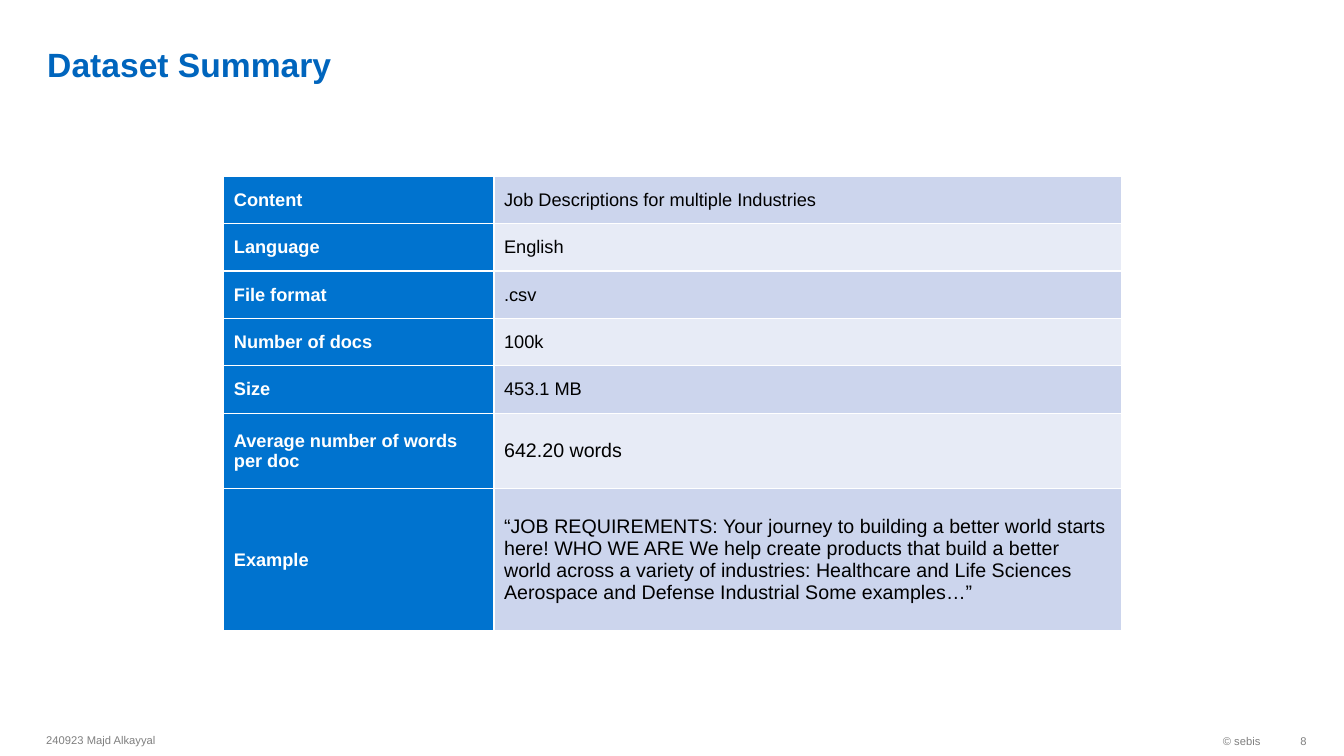
import dataclasses
import typing

import pptx
import pptx.dml.color
import pptx.enum.text
import pptx.oxml
import pptx.oxml.ns
import pptx.util

Inches = pptx.util.Inches
Anchor = pptx.enum.text.MSO_ANCHOR
Align = pptx.enum.text.PP_ALIGN


@dataclasses.dataclass(frozen=True)
class Theme:
    font: str = "Arial"
    title: str = "0065BD"
    header: str = "0073CF"
    bands: tuple[str, str] = ("CCD5ED", "E7EBF6")
    white: str = "FFFFFF"
    black: str = "000000"
    grey: str = "7F7F7F"
    title_size: int = 24
    label_size: int = 13
    long_size: int = 14
    footer_size: int = 8
    border: int = 1


THEME = Theme()


@dataclasses.dataclass(frozen=True)
class Label:
    text: str
    box: tuple[float, float, float, float]
    size: int = THEME.footer_size
    color: str = THEME.grey
    bold: bool = False
    align: typing.Any = Align.LEFT
    anchor: typing.Any = Anchor.MIDDLE
    margin_right: float = 0.1
    margin_y: float = 0.05


@dataclasses.dataclass(frozen=True)
class Fact:
    name: str
    value: str
    height: float = 0.47
    size: int = THEME.label_size


LABELS = [
    Label("Dataset Summary", (0.37, 0.05, 11.58, 0.79), THEME.title_size,
          THEME.title, True, anchor=Anchor.BOTTOM, margin_y=0),
    Label("240923 Majd Alkayyal", (0.36, 7.18, 6.3, 0.32)),
    Label("© sebis", (10.26, 7.19, 2.34, 0.32), align=Align.RIGHT),
    Label("8", (12.6, 7.19, 0.36, 0.32), align=Align.RIGHT, margin_right=0),
]

FACTS = [
    Fact("Content", "Job Descriptions for multiple Industries"),
    Fact("Language", "English"),
    Fact("File format", ".csv"),
    Fact("Number of docs", "100k"),
    Fact("Size", "453.1 MB"),
    Fact("Average number of words per doc", "642.20 words", 0.75, THEME.long_size),
    Fact(
        "Example",
        "“JOB REQUIREMENTS: Your journey to building a better world starts here! "
        "WHO WE ARE We help create products that build a better world across a "
        "variety of industries: Healthcare and Life Sciences Aerospace and Defense "
        "Industrial Some examples…”",
        1.41,
        THEME.long_size,
    ),
]

TABLE_LEFT, TABLE_TOP = 2.22, 1.75
COLUMN_WIDTHS = (2.68, 6.22)


def apply(target: typing.Any, values: dict[str, typing.Any]) -> None:
    for name, value in values.items():
        setattr(target, name, value)


def write(p: typing.Any, text: str, size: int, color: str, bold: bool) -> None:
    r = p.add_run()
    r.text = text
    apply(r.font, {"name": THEME.font, "size": pptx.util.Pt(size), "bold": bold})
    r.font.color.rgb = pptx.dml.color.RGBColor.from_string(color)


def draw_label(s: typing.Any, label: Label) -> None:
    sp = s.shapes.add_textbox(*map(Inches, label.box))
    tf = sp.text_frame
    apply(tf, {
        "word_wrap": True,
        "vertical_anchor": label.anchor,
        "margin_left": Inches(0.1),
        "margin_right": Inches(label.margin_right),
        "margin_top": Inches(label.margin_y),
        "margin_bottom": Inches(label.margin_y),
    })
    p = tf.paragraphs[0]
    p.alignment = label.align
    write(p, label.text, label.size, label.color, label.bold)


def add_borders(cell: typing.Any) -> None:
    tc_pr = cell._tc.get_or_add_tcPr()
    for i, side in enumerate("LRTB"):
        line = pptx.oxml.parse_xml(
            f'<a:ln{side} {pptx.oxml.ns.nsdecls("a")} w="{pptx.util.Pt(THEME.border)}">'
            f'<a:solidFill><a:srgbClr val="{THEME.white}"/></a:solidFill></a:ln{side}>'
        )
        tc_pr.insert(i, line)


def draw_cell(cell: typing.Any, text: str, size: int, color: str, bold: bool, fill: str) -> None:
    apply(cell, {
        "vertical_anchor": Anchor.MIDDLE,
        "margin_left": Inches(0.1),
        "margin_right": Inches(0.1),
        "margin_top": Inches(0.05),
        "margin_bottom": Inches(0.05),
    })
    cell.fill.solid()
    cell.fill.fore_color.rgb = pptx.dml.color.RGBColor.from_string(fill)
    add_borders(cell)
    write(cell.text_frame.paragraphs[0], text, size, color, bold)


def draw_facts(s: typing.Any, facts: list[Fact]) -> None:
    height = sum(fact.height for fact in facts)
    table = s.shapes.add_table(
        len(facts), len(COLUMN_WIDTHS), Inches(TABLE_LEFT), Inches(TABLE_TOP),
        Inches(sum(COLUMN_WIDTHS)), Inches(height),
    ).table
    apply(table, {"first_row": False, "first_col": True, "horz_banding": True})
    for column, width in zip(table.columns, COLUMN_WIDTHS):
        column.width = Inches(width)
    for i, fact in enumerate(facts):
        table.rows[i].height = Inches(fact.height)
        draw_cell(table.cell(i, 0), fact.name, THEME.label_size, THEME.white, True, THEME.header)
        draw_cell(table.cell(i, 1), fact.value, fact.size, THEME.black, False, THEME.bands[i % 2])


def main() -> None:
    prs = pptx.Presentation()
    apply(prs, {"slide_width": Inches(13.33), "slide_height": Inches(7.5)})
    s = prs.slides.add_slide(prs.slide_layouts[6])
    for label in LABELS:
        draw_label(s, label)
    draw_facts(s, FACTS)
    prs.save("out.pptx")


if __name__ == "__main__":
    main()
